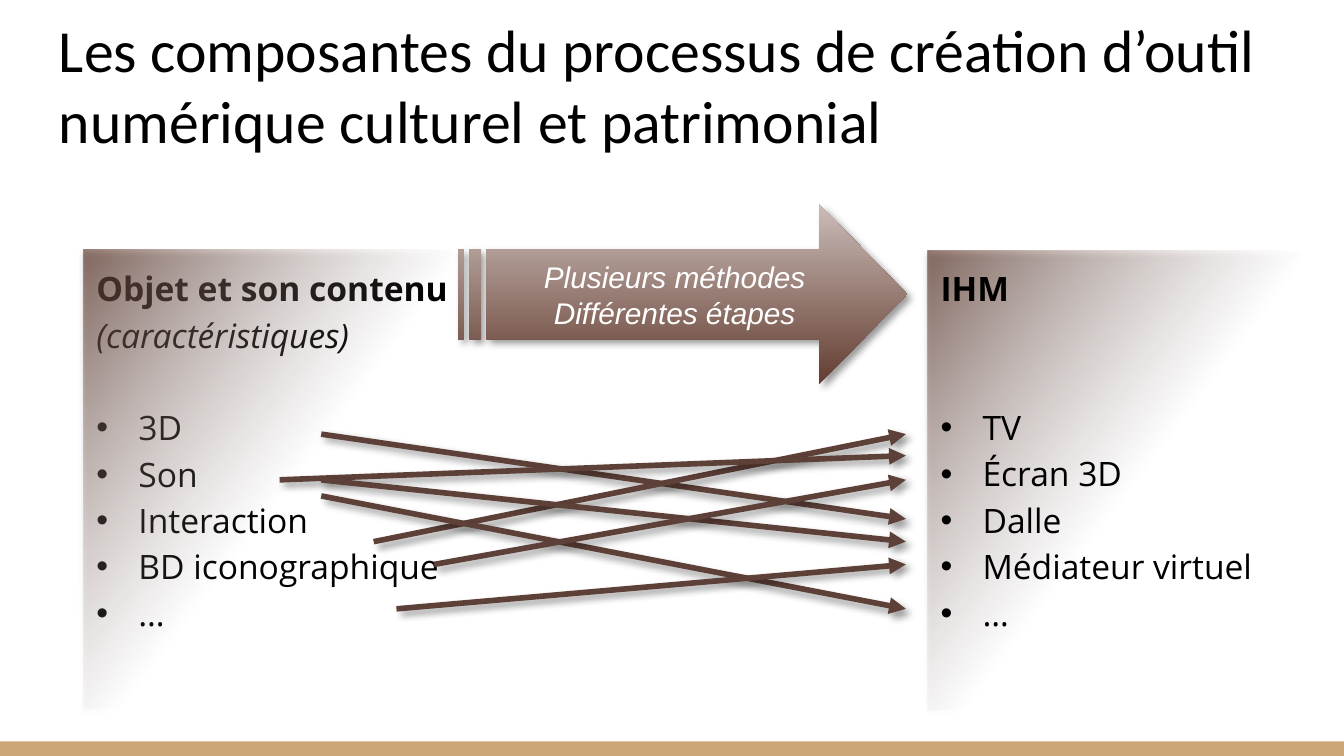
from pptx import Presentation
from pptx.dml.color import RGBColor
from pptx.enum.shapes import MSO_CONNECTOR, MSO_SHAPE
from pptx.enum.text import MSO_ANCHOR, PP_ALIGN
from pptx.oxml import parse_xml
from pptx.oxml.ns import nsdecls, qn
from pptx.util import Pt

BROWN = "633D31"
PALE = "CBBCB8"
BLACK = "000000"
INSET = 7.2
INDENT = 22.5
LINE_PITCH = 24.8


def color(value):
    return RGBColor.from_string(value)


def element(tag, content, attributes=""):
    return parse_xml(f'<a:{tag} {nsdecls("a")} {attributes}>{content}</a:{tag}>')


def add_shadow(item, opacity, blur, distance, angle):
    tint = f'<a:srgbClr val="{BLACK}"><a:alpha val="{opacity * 1000}"/></a:srgbClr>'
    outer = (f'<a:outerShdw blurRad="{Pt(blur)}" dist="{Pt(distance)}" '
             f'dir="{angle * 60000}" algn="tl" rotWithShape="0">{tint}</a:outerShdw>')
    item._element.spPr.append(element("effectLst", outer))


def add_shape(page, kind, box):
    shape = page.shapes.add_shape(kind, *map(Pt, box))
    shape.line.fill.background()
    return shape


def fill_gradient(shape, stops, angle):
    marks = "".join(
        f'<a:gs pos="{position * 1000}"><a:srgbClr val="{value}">'
        f'<a:alpha val="{opacity * 1000}"/></a:srgbClr></a:gs>'
        for position, value, opacity in stops)
    content = f'<a:gsLst>{marks}</a:gsLst><a:lin ang="{angle * 60000}" scaled="0"/>'
    geometry = shape._element.spPr.find(qn("a:prstGeom"))
    geometry.addnext(element("gradFill", content, 'rotWithShape="1"'))


def add_span(para, text, size, font, value, bold=False, italic=False):
    span = para.add_run()
    span.text = text
    span.font.size = Pt(size)
    span.font.name = font
    span.font.bold = bold
    span.font.italic = italic
    span.font.color.rgb = color(value)


def add_text_box(page, box, anchor=MSO_ANCHOR.TOP):
    frame = page.shapes.add_textbox(*map(Pt, box)).text_frame
    frame.word_wrap = True
    frame.vertical_anchor = anchor
    frame.margin_left = frame.margin_right = Pt(INSET)
    frame.margin_top = frame.margin_bottom = Pt(INSET)
    return frame


def next_para(frame, index):
    return frame.add_paragraph() if index else frame.paragraphs[0]


def add_title(page, box, text):
    frame = add_text_box(page, box, MSO_ANCHOR.BOTTOM)
    add_span(frame.paragraphs[0], text, 32, "Calibri", BLACK)


def add_panel(page, box):
    panel = add_shape(page, MSO_SHAPE.RECTANGLE, box)
    panel.rotation = 180
    fill_gradient(panel, [(0, BROWN, 68), (53, PALE, 0)], 217)
    add_shadow(panel, 35, 3.1, 1.8, 90)


def add_list(page, box, headings, items):
    frame = add_text_box(page, box)
    for index, text in enumerate(headings + items):
        para = next_para(frame, index)
        para.line_spacing = 1.15
        add_span(para, text, 18, "Open Sans", BLACK,
                 bold=index == 0, italic=0 < index < len(headings))
        if index == len(headings):
            para.space_before = Pt(LINE_PITCH * (3 - len(headings)))
        if index >= len(headings):
            properties = para._p.get_or_add_pPr()
            properties.set("marL", str(Pt(INDENT)))
            properties.set("indent", str(-Pt(INDENT)))
            properties.append(element("buClr", f'<a:srgbClr val="{BLACK}"/>'))
            properties.append(element("buFont", "", 'typeface="Arial"'))
            properties.append(element("buChar", "", 'char="•"'))


def add_method_arrow(page, box, lines):
    arrow = add_shape(page, MSO_SHAPE.STRIPED_RIGHT_ARROW, box)
    arrow.adjustments[0] = 0.5
    arrow.adjustments[1] = 0.489
    fill_gradient(arrow, [(0, BROWN, 100), (100, PALE, 100)], 270)
    add_shadow(arrow, 40, 4, 3, 45)
    frame = arrow.text_frame
    frame.vertical_anchor = MSO_ANCHOR.MIDDLE
    for index, text in enumerate(lines):
        para = next_para(frame, index)
        para.alignment = PP_ALIGN.CENTER
        add_span(para, text, 16, "Arial", "FFFFFF", italic=True)


def add_links(page, box, links):
    left, top, width, height = box
    for start_x, start_y, end_y in links:
        link = page.shapes.add_connector(
            MSO_CONNECTOR.STRAIGHT, Pt(left + start_x), Pt(top + start_y),
            Pt(left + width), Pt(top + end_y))
        link.line.color.rgb = color("5D4037")
        link.line.width = Pt(3)
        link.line._get_or_add_ln().append(element("tailEnd", "", 'type="triangle"'))
        add_shadow(link, 40, 4, 3, 45)


def add_footer_bar(page, box):
    bar = add_shape(page, MSO_SHAPE.RECTANGLE, box)
    bar.fill.solid()
    bar.fill.fore_color.rgb = color("CCA677")
    bar.shadow.inherit = False


def main():
    deck = Presentation()
    deck.slide_width = Pt(720)
    deck.slide_height = Pt(405)
    page = deck.slides.add_slide(deck.slide_layouts[6])

    add_footer_bar(page, (0, 397.2, 720, 7.8))
    add_list(page, (44.6, 133.2, 248.4, 264),
             ["Objet et son contenu", "(caractéristiques)"],
             ["3D", "Son", "Interaction", "BD iconographique", "…"])
    add_panel(page, (496.8, 134.4, 201, 245.5))
    add_title(page, (24.5, 25.2, 671, 65.5),
              "Les composantes du processus de création d’outil "
              "numérique culturel et patrimonial")
    add_list(page, (496.8, 133.2, 198.7, 264), ["IHM"],
             ["TV", "Écran 3D", "Dalle", "Médiateur virtuel", "…"])
    add_method_arrow(page, (245.5, 109.4, 240.5, 96.5),
                     ["Plusieurs méthodes", "Différentes étapes"])
    add_links(page, (149.8, 232.6, 335.5, 93.6), [
        (22.3, 0, 45.4), (50.4, 57.6, 0), (22.3, 33.1, 93.6), (0, 24.5, 11.5),
        (62.6, 93.6, 69.8), (22.3, 24.5, 57.6), (82.8, 69.8, 24.5)])
    add_panel(page, (44.6, 133.9, 201, 245.5))

    deck.save("out.pptx")


if __name__ == "__main__":
    main()
